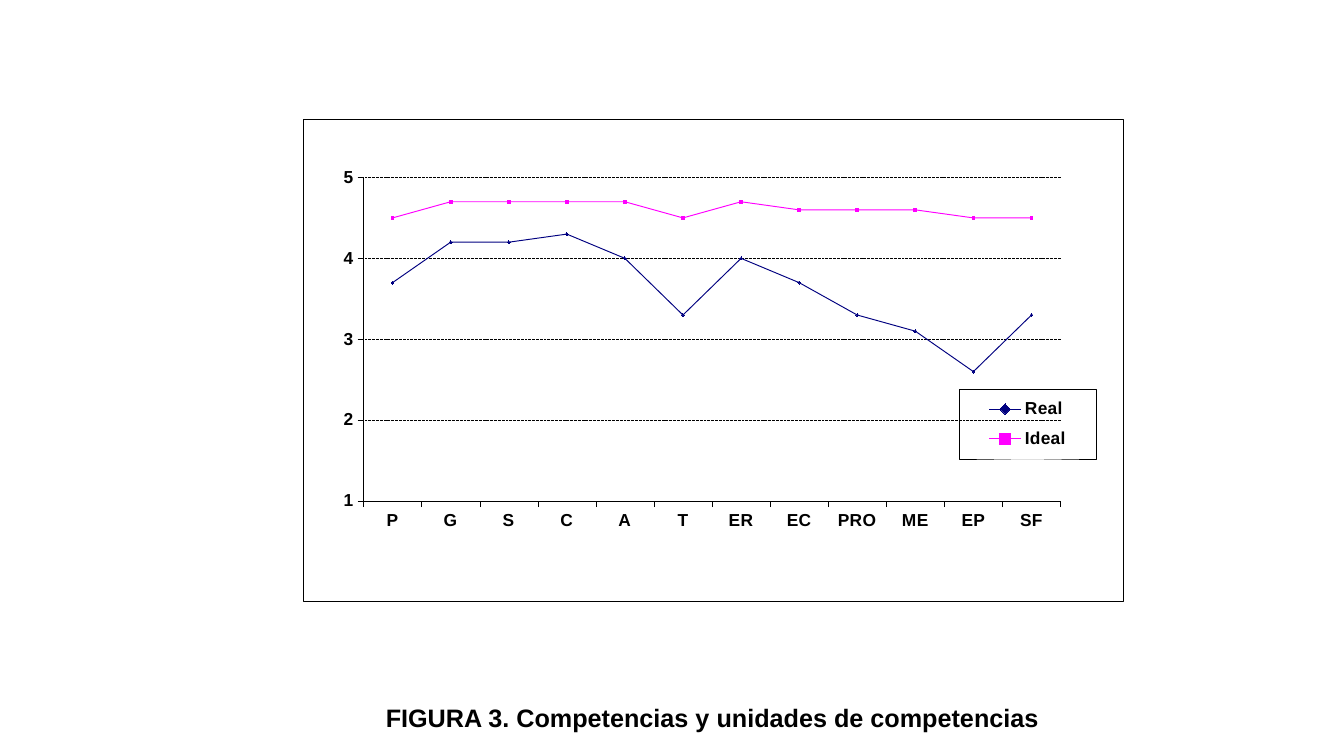
from dataclasses import dataclass

from lxml import etree
from pptx import Presentation
from pptx import util as u
from pptx.chart.data import CategoryChartData
from pptx.dml.color import RGBColor
from pptx.enum import chart as ch, dml, text
from pptx.oxml import parse_xml
from pptx.oxml.ns import nsdecls, qn


@dataclass(frozen=True)
class Theme:
    font: str = "Arial"
    ink: str = "000000"
    chart_size: float = 12.4
    caption_size: float = 18
    line: float = 0.69
    border: float = 0.34
    axis: float = 0.17
    marker: int = 2


@dataclass(frozen=True)
class Profile:
    name: str
    values: tuple[float, ...]
    color: str
    marker: ch.XL_MARKER_STYLE


@dataclass(frozen=True)
class Box:
    left: float
    top: float
    width: float
    height: float

    def inches(self) -> list[u.Length]:
        return [u.Inches(v) for v in (self.left, self.top, self.width, self.height)]


THEME = Theme()
CATEGORIES = ("P", "G", "S", "C", "A", "T", "ER", "EC", "PRO", "ME", "EP", "SF")
PROFILES = (
    Profile("Real", (3.7, 4.2, 4.2, 4.3, 4, 3.3, 4, 3.7, 3.3, 3.1, 2.6, 3.3),
            "000080", ch.XL_MARKER_STYLE.DIAMOND),
    Profile("Ideal", (4.5, 4.7, 4.7, 4.7, 4.7, 4.5, 4.7, 4.6, 4.6, 4.6, 4.5, 4.5),
            "FF00FF", ch.XL_MARKER_STYLE.SQUARE),
)
CHART_BOX = Box(3.01, 1.18, 8.13, 4.79)
CAPTION_BOX = Box(1.64, 6.87, 10.85, 0.45)
# Fractions of the chart area
PLOT_AREA = Box(0.073, 0.121, 0.851, 0.671)
LEGEND_AREA = Box(0.8, 0.56, 0.167, 0.144)


def set_font(font, size: float) -> None:
    font.name = THEME.font
    font.size = u.Pt(size)
    font.bold = True
    font.color.rgb = RGBColor.from_string(THEME.ink)


def set_line(line, color: str, width: float) -> None:
    line.color.rgb = RGBColor.from_string(color)
    line.width = u.Pt(width)


def layout_xml(area: Box, inner: bool = False) -> etree._Element:
    """Manual chart layout; inner measures the plot without its axis labels."""
    target = '<c:layoutTarget val="inner"/>' if inner else ""
    return parse_xml(
        f'<c:layout {nsdecls("c")}><c:manualLayout>{target}'
        '<c:xMode val="edge"/><c:yMode val="edge"/>'
        f'<c:x val="{area.left}"/><c:y val="{area.top}"/>'
        f'<c:w val="{area.width}"/><c:h val="{area.height}"/>'
        '</c:manualLayout></c:layout>')


def border_xml() -> etree._Element:
    return parse_xml(
        f'<c:spPr {nsdecls("c", "a")}><a:noFill/><a:ln w="{u.Pt(THEME.border)}">'
        f'<a:solidFill><a:srgbClr val="{THEME.ink}"/></a:solidFill></a:ln></c:spPr>')


def remove_layout(element: etree._Element) -> None:
    for layout in element.findall(qn("c:layout")):
        element.remove(layout)


def style_axes(chart) -> None:
    for axis in (chart.category_axis, chart.value_axis):
        axis.major_tick_mark = ch.XL_TICK_MARK.OUTSIDE
        axis.minor_tick_mark = ch.XL_TICK_MARK.NONE
        set_line(axis.format.line, THEME.ink, THEME.axis)
    axis = chart.value_axis
    axis.minimum_scale, axis.maximum_scale, axis.major_unit = 1, 5, 1
    axis.tick_labels.number_format = "0"
    axis.tick_labels.number_format_is_linked = False
    axis.has_major_gridlines = True
    grid = axis.major_gridlines.format.line
    set_line(grid, THEME.ink, THEME.line)
    grid.dash_style = dml.MSO_LINE.SQUARE_DOT


def style_series(series, profile: Profile) -> None:
    series.smooth = False
    set_line(series.format.line, profile.color, THEME.line)
    marker = series.marker
    marker.style = profile.marker
    marker.size = THEME.marker
    marker.format.fill.solid()
    marker.format.fill.fore_color.rgb = RGBColor.from_string(profile.color)
    set_line(marker.format.line, profile.color, THEME.line)


def add_legend(chart) -> None:
    chart.has_legend = True
    legend = chart.legend
    legend.position = ch.XL_LEGEND_POSITION.RIGHT
    legend.include_in_layout = False
    element = legend._element
    remove_layout(element)
    element.find(qn("c:legendPos")).addnext(layout_xml(LEGEND_AREA))
    element.find(qn("c:overlay")).addnext(border_xml())


def add_profile_chart(s) -> None:
    data = CategoryChartData(number_format="0.0")
    data.categories = CATEGORIES
    for profile in PROFILES:
        data.add_series(profile.name, profile.values)
    chart = s.shapes.add_chart(
        ch.XL_CHART_TYPE.LINE_MARKERS, *CHART_BOX.inches(), data).chart
    chart.has_title = False
    set_font(chart.font, THEME.chart_size)
    plot = chart.plots[0]
    plot.vary_by_categories = False
    style_axes(chart)
    for series, profile in zip(plot.series, PROFILES):
        style_series(series, profile)
    add_legend(chart)
    root = chart._chartSpace
    area = root.find(f'{qn("c:chart")}/{qn("c:plotArea")}')
    remove_layout(area)
    area.insert(0, layout_xml(PLOT_AREA, inner=True))
    root.find(qn("c:chart")).addnext(border_xml())


def add_caption(s) -> None:
    tf = s.shapes.add_textbox(*CAPTION_BOX.inches()).text_frame
    tf.word_wrap = True
    tf.auto_size = text.MSO_AUTO_SIZE.SHAPE_TO_FIT_TEXT
    p = tf.paragraphs[0]
    p.text = "FIGURA 3. Competencias y unidades de competencias"
    p.alignment = text.PP_ALIGN.CENTER
    p.line_spacing = 1.15
    p.space_before, p.space_after = u.Pt(6), u.Pt(3)
    set_font(p.font, THEME.caption_size)


def main() -> None:
    prs = Presentation()
    prs.slide_width, prs.slide_height = u.Inches(13.33), u.Inches(7.5)
    s = prs.slides.add_slide(prs.slide_layouts[6])
    add_profile_chart(s)
    add_caption(s)
    prs.save("out.pptx")


if __name__ == "__main__":
    main()
